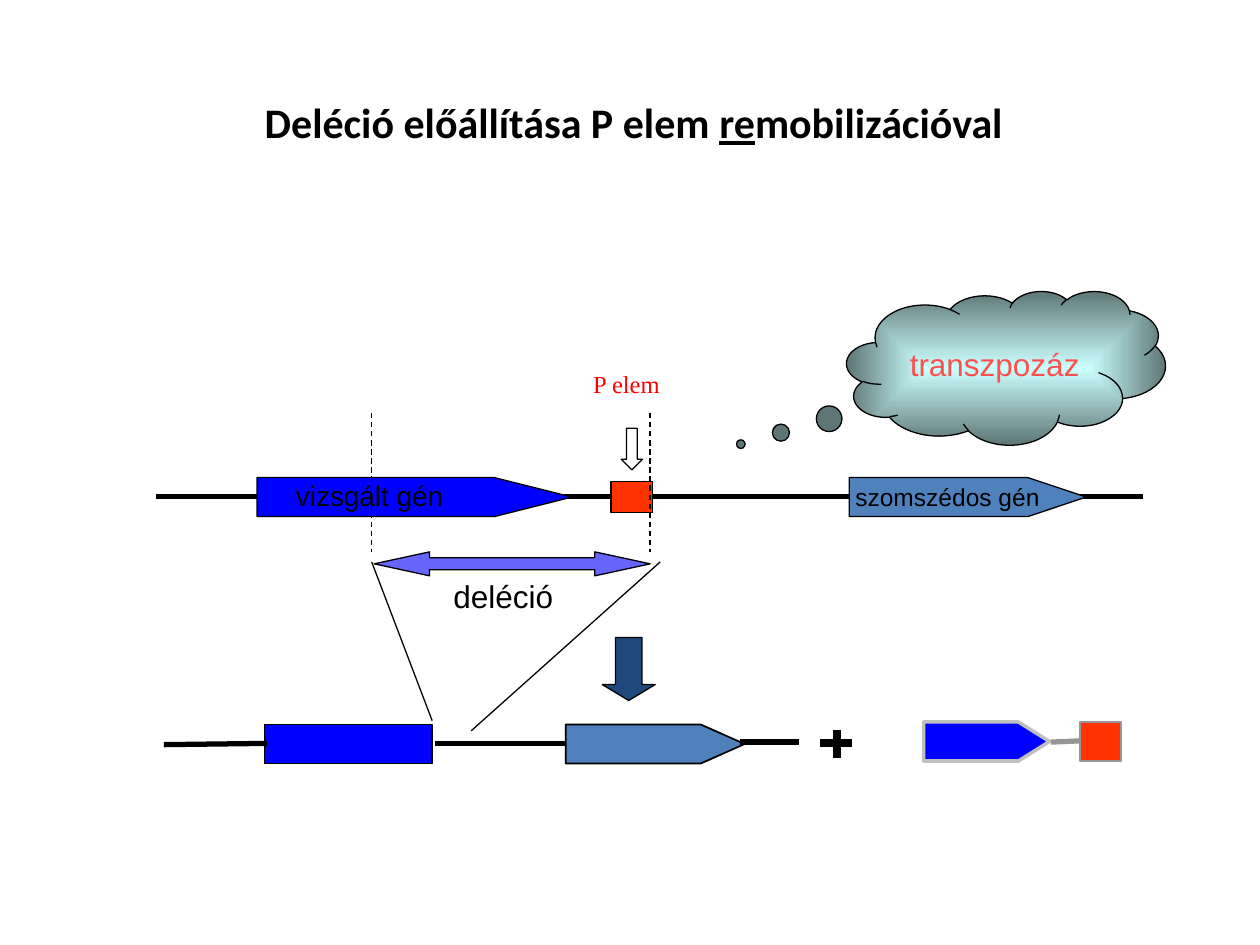
from lxml.etree import SubElement
from pptx import Presentation
from pptx.dml.color import RGBColor
from pptx.enum.dml import MSO_LINE
from pptx.enum.shapes import MSO_CONNECTOR, MSO_SHAPE as Shape
from pptx.enum.text import MSO_ANCHOR as Anchor, PP_ALIGN as Align
from pptx.oxml.ns import qn
from pptx.util import Inches, Pt

COLORS = {
    "black": "000000", "white": "FFFFFF", "gene": "0000FF",
    "neighbour": "4F81BD", "p_element": "FF3300", "p_label": "FF0000",
    "deletion": "6666FF", "step": "1F497D", "silver": "C0C0C0",
    "grey": "969696", "cloud_core": "CCFFFF", "cloud_edge": "5E7676",
    "enzyme": "FF5050",
}
GENE_HEIGHT = 0.31
TOP_GENE, BOTTOM_GENE, EXCISED = 3.79, 5.75, 5.73  # tops of the three gene rows


def color(name):
    return RGBColor.from_string(COLORS[name])


def add_part(slide, kind, box, fill, line="black", width=0.75, adjust=()):
    part = slide.shapes.add_shape(kind, *map(Inches, box))
    part.shadow.inherit = False
    for index, value in enumerate(adjust):
        part.adjustments[index] = value
    part.fill.solid()
    part.fill.fore_color.rgb = color(fill)
    part.line.color.rgb = color(line)
    part.line.width = Pt(width)
    return part


def add_line(slide, start, end, width=0.75, line="black", dashed=False):
    strand = slide.shapes.add_connector(
        MSO_CONNECTOR.STRAIGHT, *map(Inches, start + end))
    strand.line.color.rgb = color(line)
    strand.line.width = Pt(width)
    if dashed:
        strand.line.dash_style = MSO_LINE.DASH
    SubElement(strand._element.spPr, qn("a:effectLst"))


def write(frame, runs, size, font="Arial", ink="black", bold=False,
          align=Align.LEFT, anchor=Anchor.TOP, wrap=True):
    frame.word_wrap = wrap
    frame.vertical_anchor = anchor
    paragraph = frame.paragraphs[0]
    paragraph.alignment = align
    for text, underlined in runs:
        run = paragraph.add_run()
        run.text = text
        run.font.name = font
        run.font.size = Pt(size)
        run.font.bold = bold
        run.font.underline = underlined
        run.font.color.rgb = color(ink)


def add_label(slide, box, text, size, **style):
    label = slide.shapes.add_textbox(*map(Inches, box))
    write(label.text_frame, [(text, False)], size, **style)


def add_title(slide):
    title = slide.shapes.add_textbox(*map(Inches, (0.25, 0.5, 9.56, 0.94)))
    write(title.text_frame,
          [("Deléció előállítása P elem ", False), ("re", True),
           ("mobilizációval", False)],
          24, font="Calibri", bold=True, align=Align.CENTER, anchor=Anchor.MIDDLE)


def add_cloud(slide):
    cloud = add_part(slide, Shape.CLOUD_CALLOUT, (6.72, 2.31, 2.53, 1.22),
                     "cloud_core", adjust=(-0.832, 0.496))
    cloud.fill.gradient()
    for stop, name in zip(cloud.fill.gradient_stops, ("cloud_core", "cloud_edge")):
        stop.color.rgb = color(name)
    # Turn the linear gradient into one that spreads from the centre
    gradient = cloud._element.spPr.find(qn("a:gradFill"))
    gradient.remove(gradient.find(qn("a:lin")))
    spread = SubElement(gradient, qn("a:path"), {"path": "rect"})
    SubElement(spread, qn("a:fillToRect"), {side: "50000" for side in "ltrb"})
    write(cloud.text_frame, [("transzpozáz", False)], 18, ink="enzyme",
          align=Align.CENTER, anchor=Anchor.MIDDLE)


def add_product(slide):
    # Chromosome after the deletion
    add_part(slide, Shape.RECTANGLE, (2.1, BOTTOM_GENE, 1.33, GENE_HEIGHT),
             "gene", width=1)
    add_line(slide, (2.12, 5.9), (1.3, 5.91), 3)
    add_line(slide, (3.45, 5.9), (4.49, 5.9), 3)
    add_part(slide, Shape.PENTAGON, (4.49, BOTTOM_GENE, 1.42, GENE_HEIGHT),
             "neighbour", width=1, adjust=[1.127])
    # Plus sign
    add_line(slide, (6.64, 5.79), (6.64, 6.02), 4.5)
    add_line(slide, (6.51, 5.9), (6.76, 5.9), 4.5)
    # Excised fragment
    add_part(slide, Shape.PENTAGON, (7.33, EXCISED, 1, GENE_HEIGHT),
             "gene", "silver", 2, [0.796])
    add_part(slide, Shape.RECTANGLE, (8.57, EXCISED, 0.33, GENE_HEIGHT),
             "p_element", "grey", 1)
    add_line(slide, (8.34, 5.89), (8.57, 5.88), 3, "grey")


def add_starting_chromosome(slide):
    add_line(slide, (1.24, 3.94), (9.07, 3.94), 3)
    add_part(slide, Shape.PENTAGON, (2.04, TOP_GENE, 2.5, GENE_HEIGHT),
             "gene", adjust=[1.989])
    add_label(slide, (2.25, 3.75, 2.08, 0.37), "vizsgált gén", 16)
    # P element with its pointer
    add_part(slide, Shape.DOWN_ARROW, (4.93, 3.4, 0.17, 0.33), "white")
    add_label(slide, (4.61, 2.88, 0.83, 0.33), "P elem", 14,
              font="Times New Roman", ink="p_label")
    add_part(slide, Shape.RECTANGLE, (4.85, 3.82, 0.33, 0.25), "p_element")
    add_cloud(slide)
    add_part(slide, Shape.PENTAGON, (6.74, TOP_GENE, 1.88, GENE_HEIGHT),
             "neighbour", adjust=[1.492])
    add_label(slide, (6.69, 3.78, 2.17, 0.33), "szomszédos gén", 14)


def add_deletion_marks(slide):
    add_label(slide, (3.5, 4.53, 1.06, 0.4), "deléció", 18, wrap=False)
    # Ends of the deletion joining in the product
    add_line(slide, (2.95, 4.46), (3.43, 5.72))
    add_line(slide, (5.24, 4.46), (3.74, 5.8))
    for breakpoint_x in (2.95, 5.16):
        add_line(slide, (breakpoint_x, 3.28), (breakpoint_x, 4.38), dashed=True)


def main():
    deck = Presentation()
    deck.slide_width, deck.slide_height = Inches(10), Inches(7.5)
    slide = deck.slides.add_slide(deck.slide_layouts[6])

    add_title(slide)
    # Deleted range and step arrow
    add_part(slide, Shape.LEFT_RIGHT_ARROW, (2.97, 4.38, 2.19, 0.19),
             "deletion", adjust=(0.5, 2.31))
    add_part(slide, Shape.DOWN_ARROW, (4.78, 5.06, 0.42, 0.5),
             "step", adjust=(0.5, 0.3))
    add_product(slide)
    add_starting_chromosome(slide)
    # Strand to the right of the product
    add_line(slide, (5.87, 5.89), (6.34, 5.89), 3)
    add_deletion_marks(slide)

    deck.save("out.pptx")


if __name__ == "__main__":
    main()
